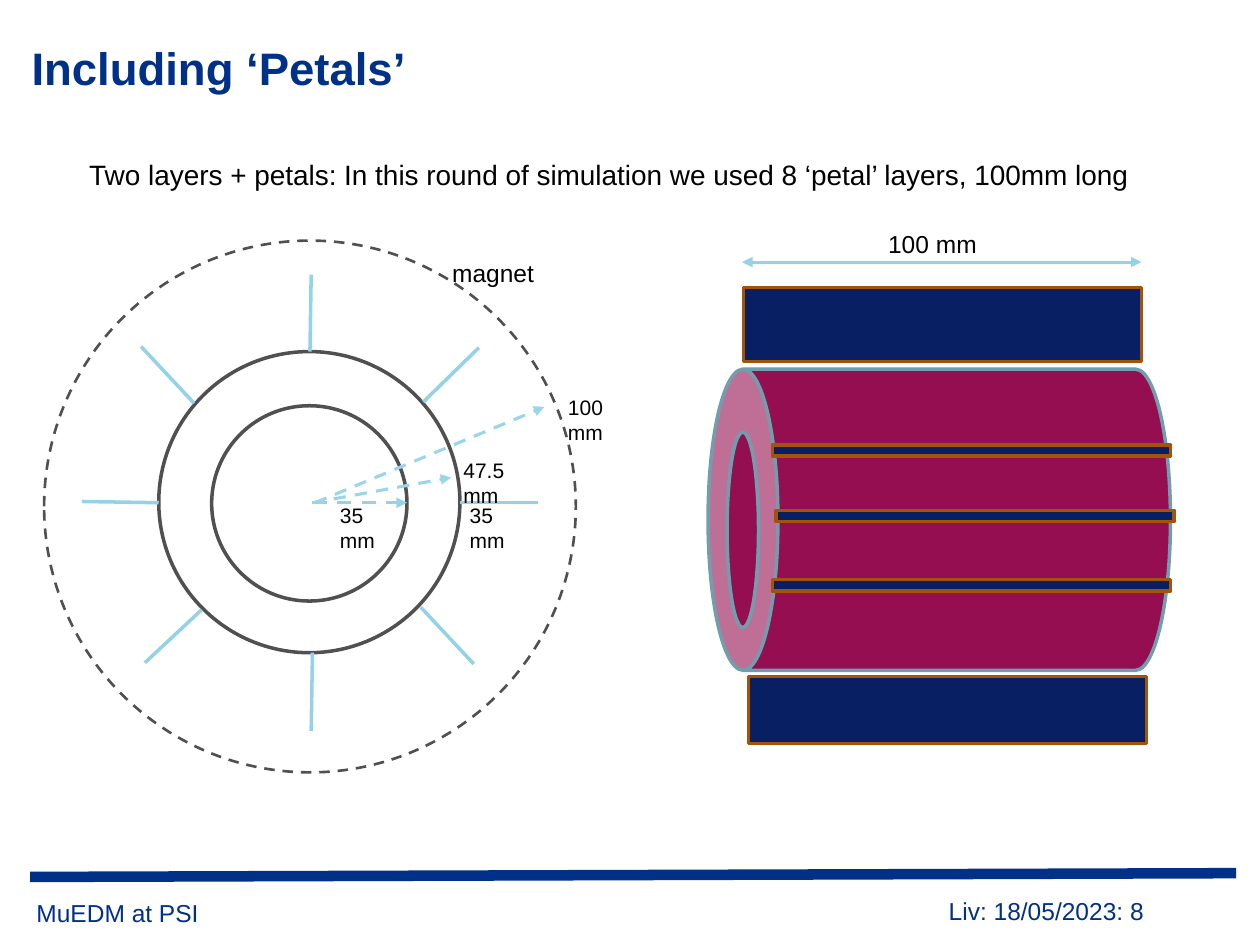
from dataclasses import dataclass

from lxml import etree
from pptx import Presentation
from pptx import util as u
from pptx.dml import color
from pptx.enum import dml, shapes, text
from pptx.oxml import ns

KIND = shapes.MSO_SHAPE


@dataclass(frozen=True)
class Theme:
    """Colours, font and type sizes of the slide."""
    font: str = "Arial"
    blue: str = "003087"
    black: str = "000000"
    navy: str = "091F64"
    rust: str = "A25409"
    plum: str = "950E51"
    steel: str = "719EAD"
    grey: str = "505050"
    sky: str = "94D2E7"
    pale: str = "99D6EA"
    title: int = 26
    body: int = 16
    label: int = 14
    small: int = 12


T = Theme()


def rgb(code):
    """Turn a hex code into a colour."""
    return color.RGBColor.from_string(code)


def inch(*nums):
    """Turn numbers into lengths."""
    return [u.Inches(n) for n in nums]


def write(frame, words, size, tint, bold=False):
    """Put one line of styled words into a text frame."""
    para = frame.paragraphs[0]
    para.text = words
    para.alignment = text.PP_ALIGN.LEFT
    font = para.font
    font.name, font.size, font.bold = T.font, u.Pt(size), bold
    font.color.rgb = rgb(tint)


def label(parts, box, words, size=T.label, tint=T.black, pad=None):
    """Add a wrapping text box."""
    frame = parts.add_textbox(*inch(*box)).text_frame
    frame.word_wrap = True
    if pad is not None:
        inset(frame, pad)
    write(frame, words, size, tint)


def inset(frame, pad):
    """Give a text frame equal margins."""
    for side in ("left", "top", "right", "bottom"):
        setattr(frame, f"margin_{side}", u.Inches(pad))


def solid(parts, kind, box, edge, fill=None, width=2):
    """Add an outlined shape, filled when a fill is given."""
    item = parts.add_shape(kind, *inch(*box))
    item.shadow.inherit = False
    if fill:
        item.fill.solid()
        item.fill.fore_color.rgb = rgb(fill)
    else:
        item.fill.background()
    item.line.color.rgb = rgb(edge)
    item.line.width = u.Pt(width)
    return item


def rule(parts, start, end, tint=T.sky, width=2, dash=False, heads=()):
    """Add a straight line with optional dashes and arrowheads."""
    item = parts.add_connector(shapes.MSO_CONNECTOR.STRAIGHT, *inch(*start, *end))
    item.line.color.rgb = rgb(tint)
    item.line.width = u.Pt(width)
    if dash:
        item.line.dash_style = dml.MSO_LINE.DASH
    pen = item.line._get_or_add_ln()
    for head in heads:
        etree.SubElement(pen, ns.qn(f"a:{head}"), type="triangle")
    etree.SubElement(item._element.spPr, ns.qn("a:effectLst"))


def heading(slide, box):
    """Place the title."""
    title = slide.shapes.title
    title.left, title.top, title.width, title.height = inch(*box)
    frame = title.text_frame
    frame.vertical_anchor = text.MSO_ANCHOR.BOTTOM
    inset(frame, 0)
    write(frame, "Including ‘Petals’", T.title, T.blue, True)


def rings(slide, x, y):
    """Draw the end view: layers, petals and radii."""
    parts = slide.shapes.add_group_shape().shapes

    def at(px, py):
        """Shift a point into the box."""
        return x + px, y + py

    for px, py, size in ((1.33, 1.31, 1.55), (0.91, 0.88, 2.39)):
        solid(parts, KIND.OVAL, (*at(px, py), size, size), T.grey)
    petals = (
        ((2.11, 0.88), (2.12, 0.27)), ((2.12, 3.89), (2.13, 3.27)),
        ((3.3, 2.08), (3.92, 2.08)), ((0.3, 2.07), (0.91, 2.08)),
        ((0.8, 3.35), (1.25, 2.93)), ((3.01, 1.28), (3.45, 0.85)),
        ((0.77, 0.84), (1.19, 1.29)), ((2.99, 2.91), (3.41, 3.36)),
    )
    for start, end in petals:
        rule(parts, at(*start), at(*end))
    magnet = solid(parts, KIND.OVAL, (x, y, 4.22, 4.22), T.grey, width=1.5)
    magnet.line.dash_style = dml.MSO_LINE.DASH
    radii = (
        (2.13, (2.88, 2.08), T.sky, 2),
        (2.13, (3.23, 1.88), T.pale, 1.75),
        (2.15, (3.97, 1.32), T.pale, 1.75),
    )
    for px, end, tint, width in radii:
        rule(parts, at(px, 2.08), at(*end), tint, width, True, ("tailEnd",))
    notes = (
        (3.28, 2.03, "35 mm"), (2.25, 2.03, "35 mm"),
        (3.23, 1.67, "47.5 mm"), (4.06, 1.17, "100 mm"),
    )
    for px, py, words in notes:
        label(parts, (*at(px, py), 0.6, 0.3), words, T.small)
    label(parts, (*at(3.14, 0.09), 0.93, 0.34), "magnet")


def barrel(slide, x, y):
    """Draw the side view: tube, petals and length."""
    parts = slide.shapes.add_group_shape().shapes
    tube = solid(parts, KIND.CAN, (x + 0.64, y + 0.52, 2.39, 3.67), T.steel, T.plum)
    tube.adjustments[0] = 0.232
    tube.rotation = 270
    solid(parts, KIND.OVAL, (x + 0.15, y + 1.66, 0.25, 1.55), T.steel, T.plum)
    plates = (
        (0.28, 0.51, 0.59), (0.32, 3.6, 0.53),
        (0.51, 1.76, 0.09), (0.51, 2.83, 0.09), (0.54, 2.28, 0.09),
    )
    for px, py, high in plates:
        solid(parts, KIND.RECTANGLE, (x + px, y + py, 3.16, high), T.rust, T.navy)
    rule(parts, (x + 0.27, y + 0.31), (x + 3.44, y + 0.31),
         width=1.75, heads=("headEnd", "tailEnd"))
    label(parts, (x + 1.33, y, 1.05, 0.4), "100 mm")


def footer(slide, x, y):
    """Draw the bottom rule and its two notes."""
    parts = slide.shapes
    rule(parts, (x + 0.05, y + 0.03), (x + 9.62, y), T.blue, 6)
    label(parts, (x, y + 0.1, 6.45, 0.39), "MuEDM at PSI", tint=T.blue, pad=0.1)
    label(parts, (x + 7.34, y + 0.18, 2.4, 0.24), "Liv: 18/05/2023: 8", tint=T.blue, pad=0)


def main():
    """Build and save the slide."""
    deck = Presentation()
    deck.slide_width, deck.slide_height = inch(10, 7.5)
    slide = deck.slides.add_slide(deck.slide_layouts[5])
    footer(slide, 0.19, 6.93)
    heading(slide, (0.25, 0.28, 9.5, 0.47))
    label(slide.shapes, (0.61, 1.2, 9.2, 0.75),
          "Two layers + petals: In this round of simulation we used "
          "8 ‘petal’ layers, 100mm long", T.body)
    barrel(slide, 5.62, 1.77)
    rings(slide, 0.35, 1.91)
    deck.save("out.pptx")


if __name__ == "__main__":
    main()
